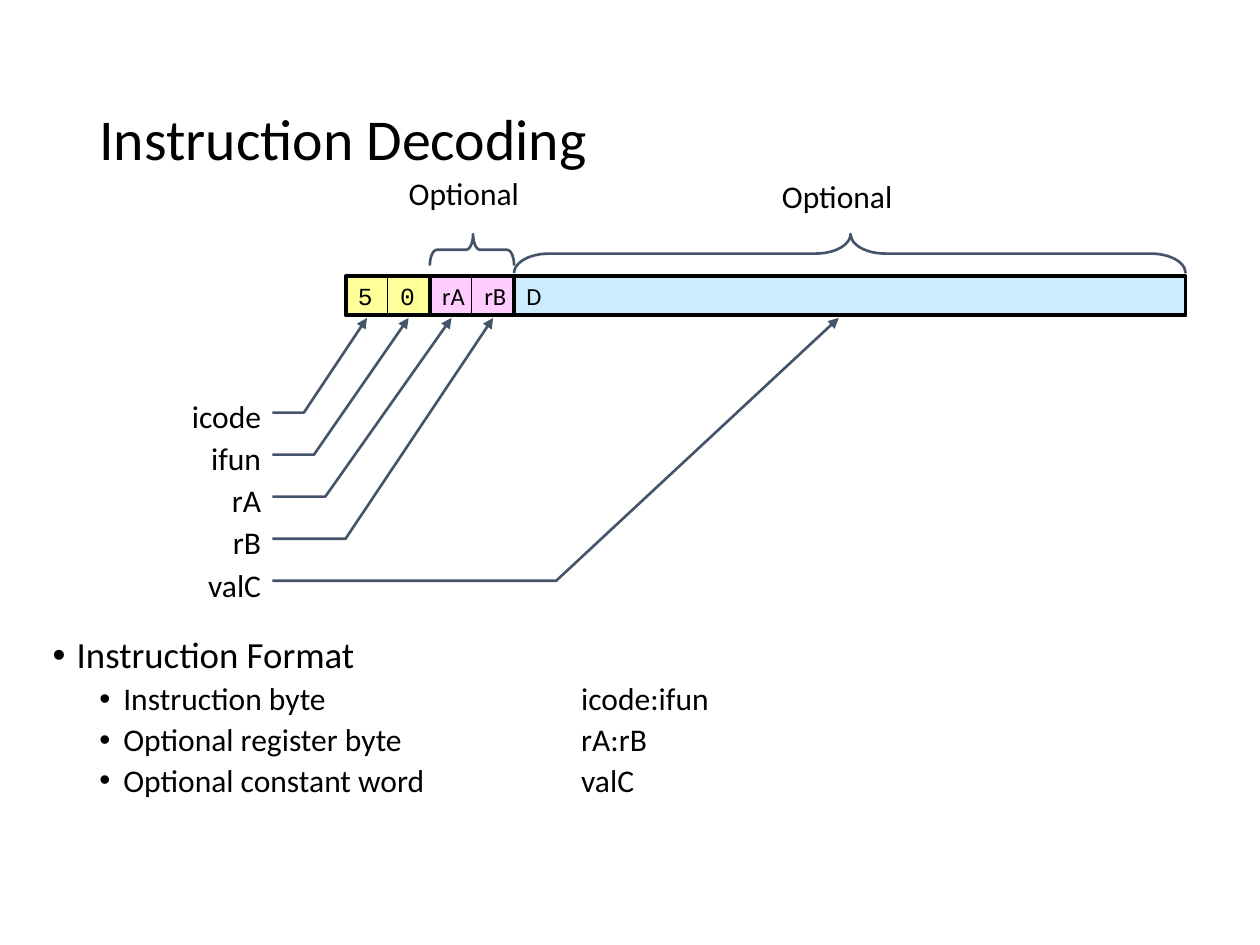
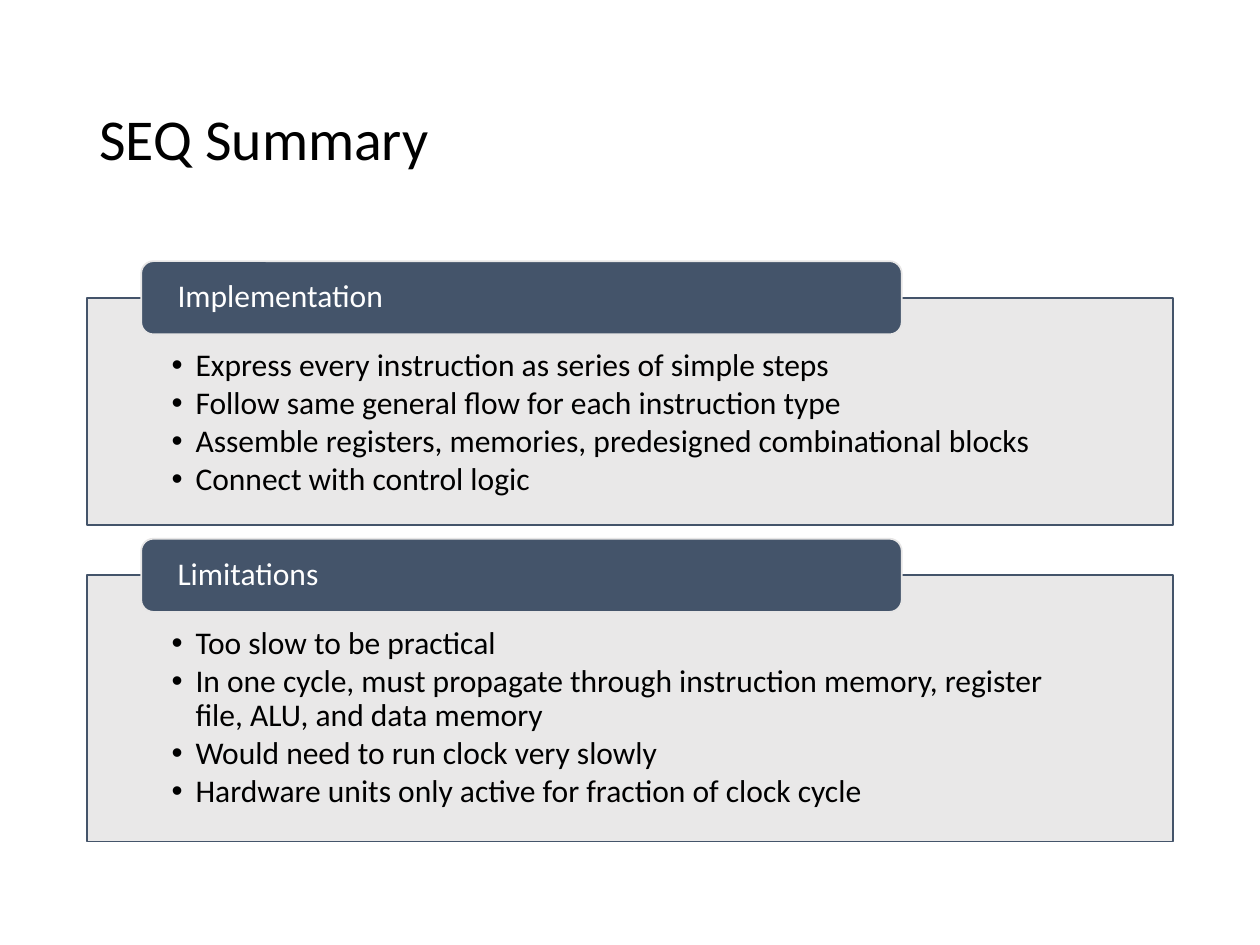
from lxml.etree import SubElement
from pptx import Presentation
from pptx.dml.color import RGBColor
from pptx.enum.shapes import MSO_SHAPE as Preset
from pptx.enum.text import MSO_ANCHOR as Anchor, PP_ALIGN as Align
from pptx.oxml.ns import qn
from pptx.util import Inches, Pt

BLACK, WHITE, SLATE, GRAY = "000000", "FFFFFF", "44546A", "E7E6E6"
YELLOW, PINK, BLUE = "FFFF99", "FFCCFF", "CCECFF"
rgb = RGBColor.from_string


def style(shape, fill=None, line=BLACK, width=1.0):
    shape.shadow.inherit = False
    if fill:
        shape.fill.solid()
        shape.fill.fore_color.rgb = rgb(fill)
    else:
        shape.fill.background()
    shape.line.color.rgb = rgb(line)
    shape.line.width = Pt(width)


def write(shape, *lines, size=18, color=BLACK, font="Calibri", align=Align.LEFT,
          anchor=Anchor.TOP, inset=(0.1, 0.05, 0.1, 0.05), wrap=True,
          spacing=None, before=0, after=0, bullet_at=None, tab=None):
    """Append one paragraph per line to the text of the shape."""
    frame = shape.text_frame
    frame.word_wrap = wrap
    frame.vertical_anchor = anchor
    (frame.margin_left, frame.margin_top,
     frame.margin_right, frame.margin_bottom) = map(Inches, inset)
    for line in lines:
        para = frame.add_paragraph() if frame.text else frame.paragraphs[0]
        para.alignment = align
        para.line_spacing = spacing
        para.space_before, para._pPr  # keep paragraph properties present
        para.space_before, para.space_after = Pt(before), Pt(after)
        span = para.add_run()
        span.text = line
        span.font.size, span.font.name = Pt(size), font
        span.font.color.rgb = rgb(color)
        props = para._p.get_or_add_pPr()
        if bullet_at is not None:
            props.set("marL", str(Inches(bullet_at + 0.19)))
            props.set("indent", str(-Inches(0.19)))
            SubElement(props, qn("a:buFont"), typeface="Arial")
            SubElement(props, qn("a:buChar"), char="•")
        if tab:
            stops = SubElement(props, qn("a:tabLst"))
            SubElement(stops, qn("a:tab"), pos=str(Inches(tab)), algn="l")


deck = Presentation()
deck.slide_width, deck.slide_height = Inches(9.99), Inches(7.49)

# Pages with their titles
pages = []
for title in ("Instruction Decoding", "SEQ Summary"):
    page = deck.slides.add_slide(deck.slide_layouts[6])
    box = page.shapes.add_textbox(Inches(0.69), Inches(0.4), Inches(8.61), Inches(1.45))
    write(box, title, size=33, anchor=Anchor.MIDDLE, spacing=0.9)
    pages.append(page)
decoding, summary = (page.shapes for page in pages)

# Decoding: list of the format's parts
body = decoding.add_textbox(Inches(0.32), Inches(5), Inches(9.07), Inches(2.03))
write(body, "Instruction Format", size=21, spacing=0.9, before=7.5, bullet_at=0)
write(body, "Instruction byte\ticode:ifun", "Optional register byte\trA:rB",
      "Optional constant word\tvalC", spacing=0.9, before=3.8, bullet_at=0.37, tab=4.19)

# Decoding: instruction bytes, each a framed pair of cells
LEFT, TOP, CELL, HEIGHT = 2.74, 2.19, 0.334, 0.31
RIGHT = 9.4
registers_left, constant_left = LEFT + 2 * CELL, LEFT + 4 * CELL
for pair_left, fill, font, names in ((LEFT, YELLOW, "Courier New", "5 0"),
                                     (registers_left, PINK, "Calibri", "rA rB")):
    for column, name in enumerate(names.split()):
        cell = decoding.add_shape(Preset.RECTANGLE, Inches(pair_left + column * CELL),
                                  Inches(TOP), Inches(CELL), Inches(HEIGHT))
        style(cell, fill, width=0.5)
        write(cell, name, size=14, font=font, anchor=Anchor.MIDDLE, wrap=False)
    frame = decoding.add_shape(Preset.RECTANGLE, Inches(pair_left), Inches(TOP),
                               Inches(2 * CELL), Inches(HEIGHT))
    style(frame, width=2.25)
constant = decoding.add_shape(Preset.RECTANGLE, Inches(constant_left), Inches(TOP),
                              Inches(RIGHT - constant_left), Inches(HEIGHT))
style(constant, BLUE, width=2.25)
write(constant, "D", size=14, anchor=Anchor.MIDDLE, wrap=False)

# Decoding: field labels with bent arrows to their cells
fields = (("icode", 2.41, 2.91), ("ifun", 2.49, 3.24), ("rA", 2.58, 3.58),
          ("rB", 2.74, 3.91), ("valC", 4.41, 6.65))
for row, (name, bend, tip) in enumerate(fields):
    top = 3.1 + row / 3
    label = decoding.add_textbox(Inches(1.08), Inches(top), Inches(1.04), Inches(0.37))
    write(label, name, align=Align.RIGHT, inset=[0.05] * 4)
    level = Inches(top + 0.17)
    builder = decoding.build_freeform(Inches(2.16), level)
    builder.add_line_segments([(Inches(bend), level), (Inches(tip), Inches(2.52))],
                              close=False)
    arrow = builder.convert_to_shape()
    style(arrow, line=SLATE, width=1.5)
    SubElement(arrow.line._get_or_add_ln(), qn("a:tailEnd"), type="triangle")

# Decoding: braces over the optional parts, turned to open downwards
for left, right, depth, curve, label_left, label_top in (
        (registers_left, constant_left, 0.25, (0.222, 0.487), 3.19, 1.33),
        (constant_left, RIGHT, 0.31, (0.889, 0.499), 6.15, 1.35)):
    length = right - left
    center_x, center_y = (left + right) / 2, 1.855 + depth / 2
    brace = decoding.add_shape(Preset.LEFT_BRACE, Inches(center_x - depth / 2),
                               Inches(center_y - length / 2), Inches(depth), Inches(length))
    brace.rotation = 90
    brace.adjustments[0], brace.adjustments[1] = curve
    style(brace, line=SLATE, width=1.5)
    label = decoding.add_textbox(Inches(label_left), Inches(label_top),
                                 Inches(1.11), Inches(0.37))
    write(label, "Optional", inset=[0.05] * 4)

# Summary: panels with a heading over the top edge
panels = (
    ("Implementation", 2.36, 1.8, (
        "Express every instruction as series of simple steps",
        "Follow same general flow for each instruction type",
        "Assemble registers, memories, predesigned combinational blocks",
        "Connect with control logic")),
    ("Limitations", 4.56, 2.11, (
        "Too slow to be practical",
        "In one cycle, must propagate through instruction memory, register file, "
        "ALU, and data memory",
        "Would need to run clock very slowly",
        "Hardware units only active for fraction of clock cycle")),
)
for name, top, height, points in panels:
    panel = summary.add_shape(Preset.RECTANGLE, Inches(0.69), Inches(top),
                              Inches(8.61), Inches(height))
    style(panel, GRAY, SLATE)
    panel_color = panel.element.spPr.find(qn("a:solidFill"))[0]
    SubElement(panel_color, qn("a:alpha"), val="90000")
    write(panel, *points, inset=(0.67, 0.41, 0.67, 0.14), spacing=0.9, after=2.2,
          bullet_at=0)
    heading = summary.add_shape(Preset.ROUNDED_RECTANGLE, Inches(1.12),
                                Inches(top - 0.29), Inches(6.03), Inches(0.58))
    style(heading, SLATE, GRAY)
    write(heading, name, color=WHITE, anchor=Anchor.MIDDLE, inset=(0.26, 0, 0.26, 0),
          spacing=0.9)

deck.save("out.pptx")
